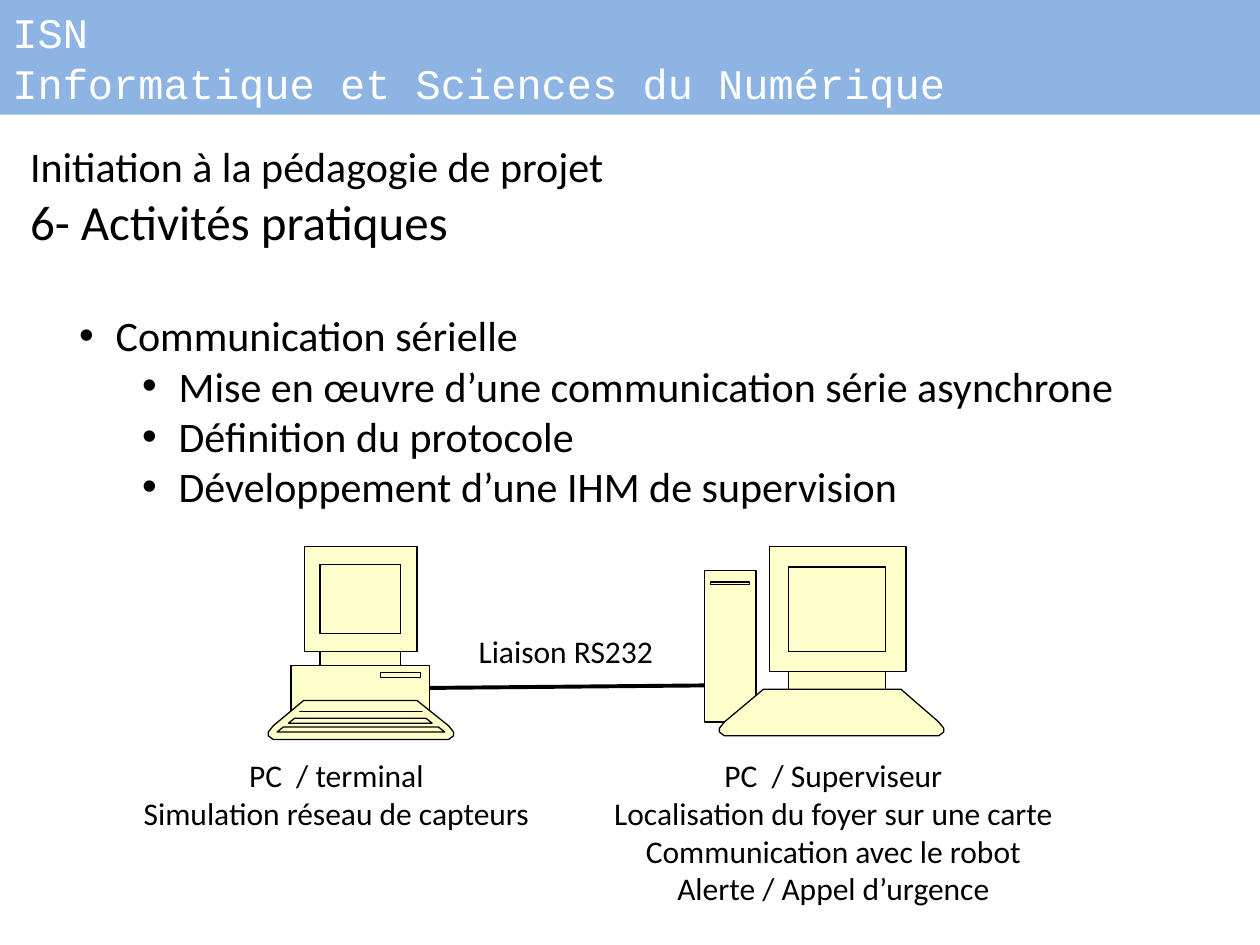
from copy import deepcopy
from lxml import etree
from pptx import Presentation
from pptx.dml.color import RGBColor
from pptx.enum.shapes import MSO_CONNECTOR, MSO_SHAPE
from pptx.enum.text import MSO_ANCHOR, PP_ALIGN
from pptx.oxml.ns import qn
from pptx.util import Inches, Pt

RECT = MSO_SHAPE.RECTANGLE
LINE = MSO_CONNECTOR.STRAIGHT
LEFT, MID = PP_ALIGN.LEFT, PP_ALIGN.CENTER
BLUE, CREAM, BLACK, WHITE = "8EB4E3", "FFFFCC", "000000", "FFFFFF"

HEAD = ["ISN", "Informatique et Sciences du Numérique"]
TITLES = [("Initiation à la pédagogie de projet", 24), ("6- Activités pratiques", 28)]
POINTS = [
    ("Communication sérielle", 0),
    ("Mise en œuvre d’une communication série asynchrone", 1),
    ("Définition du protocole", 1),
    ("Développement d’une IHM de supervision", 1),
]
LABELS = [
    ((3.7, 4.97, 1.6, 0.4), LEFT, ["Liaison RS232"]),
    ((1.02, 5.95, 3.3, 0.71), MID, ["PC  / terminal\nSimulation réseau de capteurs"]),
    ((4.75, 5.95, 3.73, 1.31), MID, [
        "PC  / Superviseur\nLocalisation du foyer sur une carte",
        "Communication avec le robot",
        "Alerte / Appel d’urgence",
    ]),
]


def box(x1, y1, x2, y2):
    return [(x1, y1), (x2, y1), (x2, y2), (x1, y2)]


def row(x1, x2, y1, y2, slope):
    return [(x1 + slope, y1), (x2 - slope, y1), (x2, y2), (x1, y2)]


def keys(x1, x2, top1, top2, top, low):
    side = [(0.04, 0.11), (0, 0.06), (0, 0.03), (0.04, 0)]
    return ([(top1, top), (top2, top)]
            + [(x2 - dx, low - dy) for dx, dy in side]
            + [(x1 + dx, low - dy) for dx, dy in reversed(side)])


TERMINAL = [
    box(2.42, 4.34, 3.31, 5.17),
    box(2.54, 5.17, 3.18, 5.28),
    box(2.31, 5.28, 3.41, 5.65),
    keys(2.13, 3.6, 2.41, 3.31, 5.56, 5.87),
    row(2.38, 3.35, 5.65, 5.65, 0),
    row(2.29, 3.43, 5.7, 5.74, 0.05),
    row(2.2, 3.53, 5.77, 5.81, 0.05),
    box(3.02, 5.34, 3.34, 5.38),
    box(2.54, 4.48, 3.18, 5.03),
]
MONITOR = [
    box(5.59, 4.53, 6, 5.73),
    box(6.11, 4.34, 7.19, 5.33),
    box(6.26, 5.33, 7.03, 5.47),
    keys(5.71, 7.49, 6.06, 7.15, 5.47, 5.84),
    box(6.26, 4.5, 7.03, 5.17),
    box(5.64, 4.62, 5.95, 4.64),
]

deck = Presentation()
deck.slide_width, deck.slide_height = Inches(10), Inches(7.5)
slide = deck.slides.add_slide(deck.slide_layouts[6])
shapes = slide.shapes


def color(code):
    return RGBColor.from_string(code)


def write(para, text, size, font="Calibri", code=BLACK):
    for i, part in enumerate(text.split("\n")):
        if i:
            para.add_line_break()
        run = para.add_run()
        run.text = part
        run.font.size, run.font.name = Pt(size), font
        run.font.color.rgb = color(code)


def next_para(frame, first):
    return frame.paragraphs[0] if first else frame.add_paragraph()


def add_text(spot, wrap):
    frame = shapes.add_textbox(*map(Inches, spot)).text_frame
    frame.word_wrap = wrap
    return frame


def bullet(para, level):
    para.level = level
    props = para._p.get_or_add_pPr()
    props.set("marL", str(Inches(0.68 + 0.5 * level)))
    props.set("indent", str(Inches(-0.29)))
    etree.SubElement(props, qn("a:buFont")).set("typeface", "Arial")
    etree.SubElement(props, qn("a:buChar")).set("char", "•")


def draw(parts):
    parts = [[(Inches(x), Inches(y)) for x, y in part] for part in parts]
    pen = shapes.build_freeform(*parts[0][0])
    for i, part in enumerate(parts):
        if i:
            pen.move_to(*part[0])
        pen.add_line_segments(part[1:], close=True)
    shape = pen.convert_to_shape()
    shape.shadow.inherit = False
    shape.fill.solid()
    shape.fill.fore_color.rgb = color(CREAM)
    shape.line.color.rgb = color(BLACK)
    shape.line.width = Pt(0.75)
    whole = next(shape._element.iter(qn("a:path")))
    steps = list(whole)
    for step in steps:
        whole.remove(step)
    blank, group = deepcopy(whole), whole.getparent()
    group.remove(whole)
    for step in steps:
        if step.tag == qn("a:moveTo"):
            piece = deepcopy(blank)
            group.append(piece)
        piece.append(step)


band = shapes.add_shape(RECT, 0, 0, Inches(10), Inches(0.91))
band.shadow.inherit = False
band.fill.solid()
band.fill.fore_color.rgb = color(BLUE)
band.line.fill.background()
band.text_frame.vertical_anchor = MSO_ANCHOR.MIDDLE
for i, text in enumerate(HEAD):
    para = next_para(band.text_frame, i == 0)
    para.alignment = LEFT
    write(para, text, 24, "Courier New", WHITE)

body = add_text((0.14, 1.07, 9.86, 3.06), True)
for i, (text, size) in enumerate(TITLES):
    write(next_para(body, i == 0), text, size)
for i, (text, level) in enumerate(POINTS):
    para = body.add_paragraph()
    if i == 0:
        para.space_before = Pt(34)
    bullet(para, level)
    write(para, text, 24)

draw(MONITOR)
draw(TERMINAL)

link = shapes.add_connector(LINE, *map(Inches, (3.41, 5.46, 5.59, 5.44)))
link.line.color.rgb = color(BLACK)
link.line.width = Pt(2.25)
etree.SubElement(link._element.spPr, qn("a:effectLst"))

for spot, align, lines in LABELS:
    frame = add_text(spot, False)
    for i, text in enumerate(lines):
        para = next_para(frame, i == 0)
        para.alignment = align
        write(para, text, 18)

deck.save("out.pptx")
